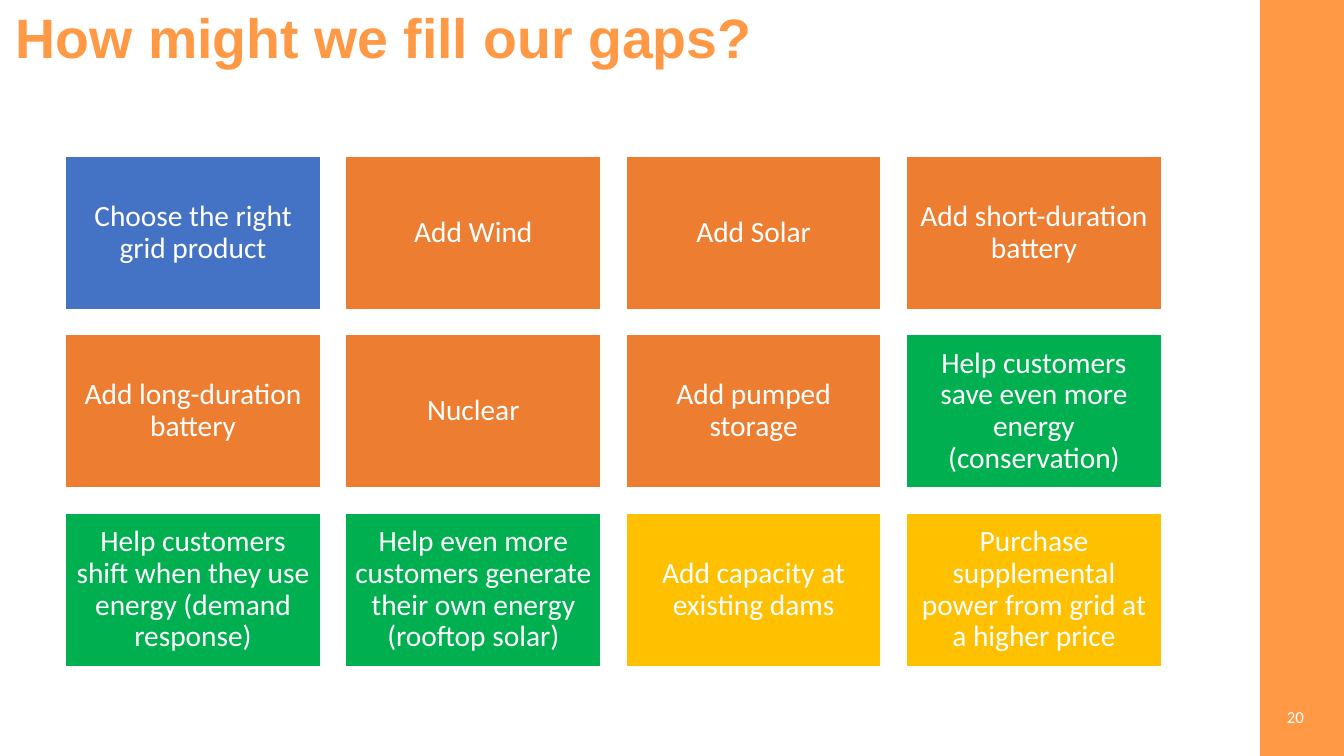
import pptx
import pptx.dml.color
import pptx.enum.shapes
import pptx.enum.text
import pptx.util

Inches = pptx.util.Inches
Point = pptx.util.Pt
Align = pptx.enum.text.PP_ALIGN

ACCENT, WHITE = "FF9946", "FFFFFF"
BLUE, ORANGE, GREEN, YELLOW = "4472C4", "ED7D31", "00B050", "FFC000"


def paint(target, color):
    """Give a fill, line or font a solid colour."""
    if hasattr(target, "solid"):
        target.solid()
        target.fore_color.rgb = pptx.dml.color.RGBColor.from_string(color)
    else:
        target.color.rgb = pptx.dml.color.RGBColor.from_string(color)


def write(shape, text, size, color, font="Calibri", align=Align.LEFT, spacing=0.9, bold=False):
    """Write one vertically centred paragraph into a shape."""
    frame = shape.text_frame
    frame.word_wrap = True
    frame.vertical_anchor = pptx.enum.text.MSO_ANCHOR.MIDDLE
    paragraph = frame.paragraphs[0]
    paragraph.alignment = align
    paragraph.line_spacing = spacing
    run = paragraph.add_run()
    run.text = text
    run.font.name = font
    run.font.size = Point(size)
    run.font.bold = bold
    paint(run.font, color)


presentation = pptx.Presentation()
presentation.slide_width = Inches(13.33)
presentation.slide_height = Inches(7.5)
slide = presentation.slides.add_slide(presentation.slide_layouts[6])
rectangle = pptx.enum.shapes.MSO_SHAPE.RECTANGLE

# Side band
band_left = Inches(12.5)
band = slide.shapes.add_shape(
    rectangle, band_left, 0, presentation.slide_width - band_left, presentation.slide_height)
band.shadow.inherit = False
paint(band.fill, ACCENT)
paint(band.line, ACCENT)
band.line.width = Point(1)

# Title
title = slide.shapes.add_textbox(Inches(0.06), Inches(0.08), Inches(10.21), Inches(0.64))
write(title, "How might we fill our gaps?", 39.6, ACCENT, font="Arial", bold=True)

# Options, filled row by row into a grid of four columns
options = [
    ("Choose the right grid product", BLUE),
    ("Add Wind", ORANGE),
    ("Add Solar", ORANGE),
    ("Add short-duration battery", ORANGE),
    ("Add long-duration battery", ORANGE),
    ("Nuclear", ORANGE),
    ("Add pumped storage", ORANGE),
    ("Help customers save even more energy (conservation)", GREEN),
    ("Help customers shift when they use energy (demand response)", GREEN),
    ("Help even more customers generate their own energy (rooftop solar)", GREEN),
    ("Add capacity at existing dams", YELLOW),
    ("Purchase supplemental power from grid at a higher price", YELLOW),
]
columns = 4
grid_left, grid_top = 0.65, 1.55
card_width, card_height, gap = 2.53, 1.52, 0.25
for index, (label, color) in enumerate(options):
    row, column = divmod(index, columns)
    card = slide.shapes.add_shape(
        rectangle,
        Inches(grid_left + column * (card_width + gap)),
        Inches(grid_top + row * (card_height + gap)),
        Inches(card_width), Inches(card_height))
    card.shadow.inherit = False
    paint(card.fill, color)
    paint(card.line, WHITE)
    card.line.width = Point(1)
    frame = card.text_frame
    frame.margin_left = frame.margin_right = Inches(0.09)
    frame.margin_top = frame.margin_bottom = Inches(0.09)
    write(card, label, 21, WHITE, align=Align.CENTER)

# Slide number
number = slide.shapes.add_textbox(Inches(10.03), Inches(6.91), Inches(3), Inches(0.4))
write(number, "20", 12, WHITE, align=Align.RIGHT, spacing=1.0)

presentation.save("out.pptx")
